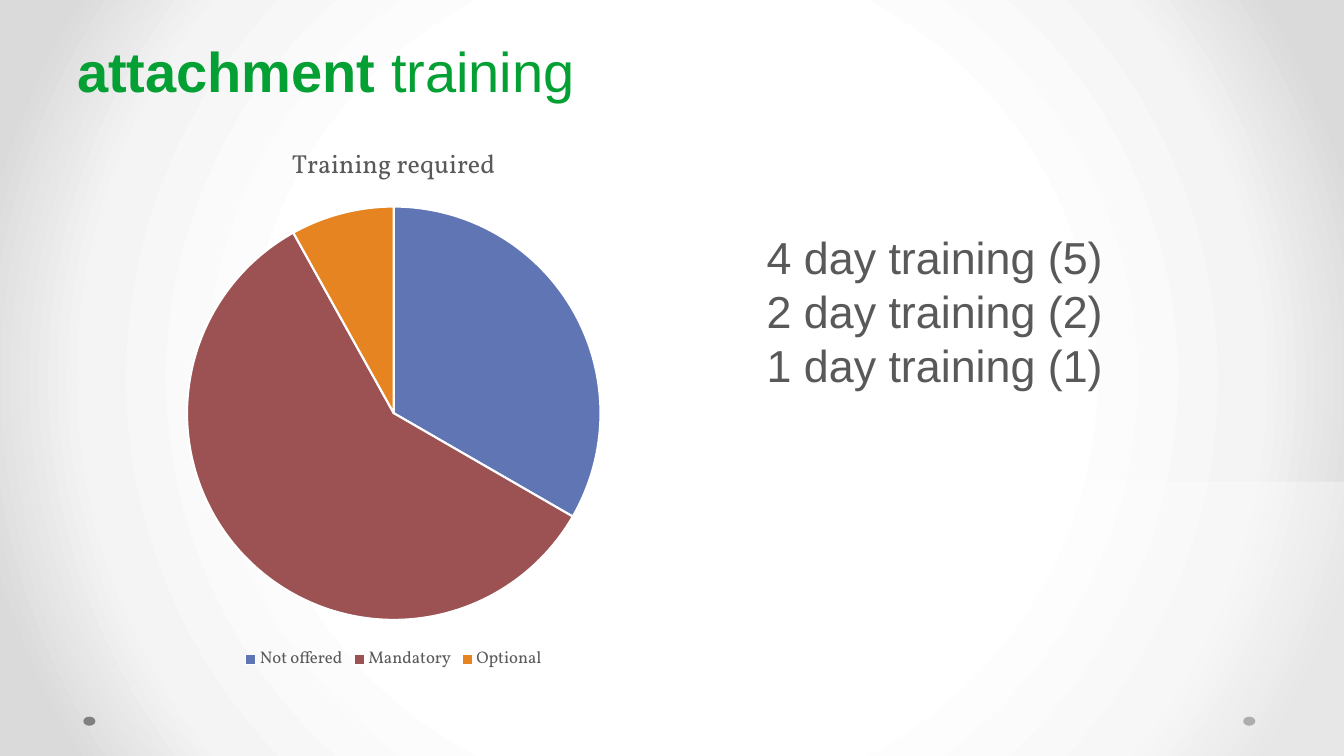
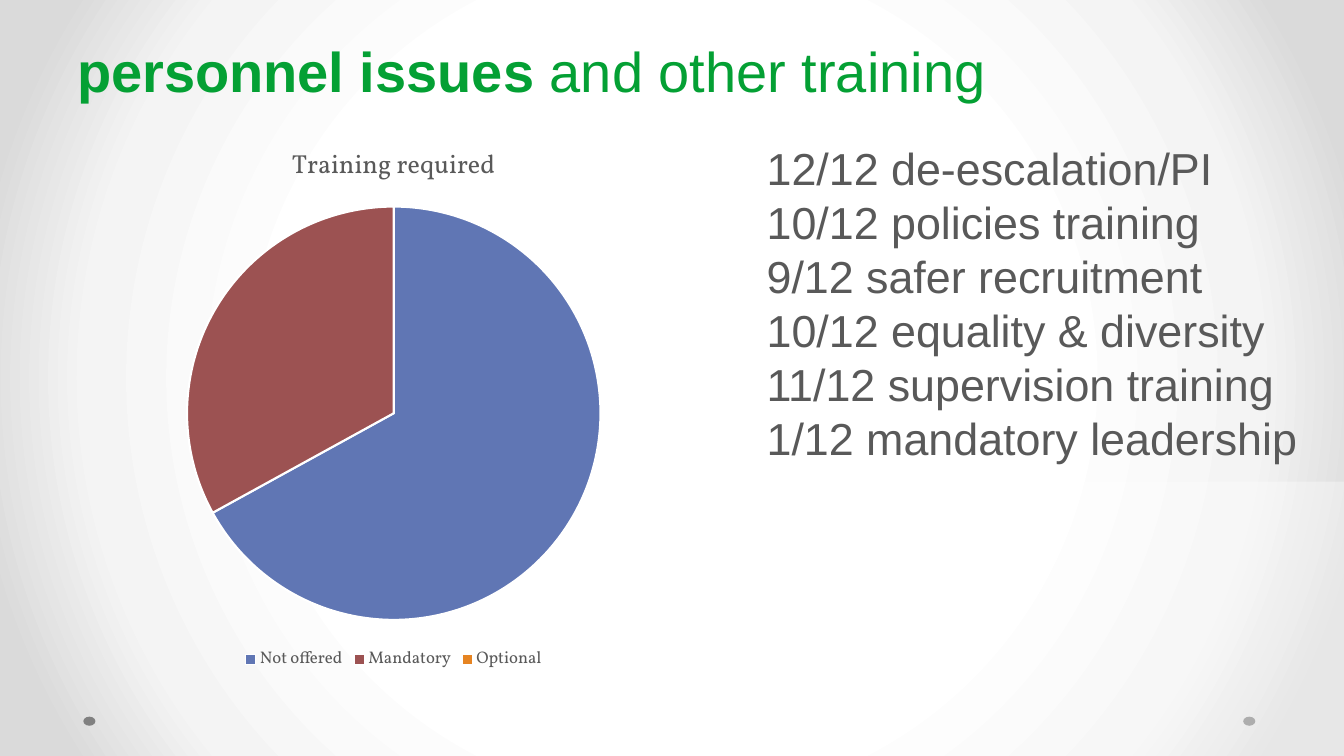
from lxml.etree import SubElement
from pptx import Presentation
from pptx.chart.data import CategoryChartData
from pptx.dml.color import RGBColor
from pptx.enum.chart import XL_CHART_TYPE, XL_LEGEND_POSITION
from pptx.enum.shapes import MSO_SHAPE
from pptx.enum.text import MSO_ANCHOR
from pptx.oxml.ns import qn
from pptx.util import Inches, Pt

WIDTH, HEIGHT = Inches(13.33), Inches(7.5)

GREEN = RGBColor(0x04, 0xA0, 0x34)
TEXT_GREY = RGBColor(0x59, 0x59, 0x59)
DOT_GREY = RGBColor(0x80, 0x80, 0x80)
WHITE = RGBColor(0xFF, 0xFF, 0xFF)
LIGHT_GREY = RGBColor(0xF4, 0xF4, 0xF4)
EDGE_GREY = RGBColor(0xDA, 0xDA, 0xDA)
SLICE_COLOURS = (
    RGBColor(0x60, 0x76, 0xB4),
    RGBColor(0x9C, 0x52, 0x52),
    RGBColor(0xE6, 0x84, 0x22),
)
BACKGROUND_STOPS = ((50, WHITE), (76, LIGHT_GREY), (92, EDGE_GREY))

SANS, SERIF = "Arial", "Vollkorn"
CHART_TITLE = "Training required"
CATEGORIES = ("Not offered", "Mandatory", "Optional")

# Regions: left, top, width, height in percent of the slide
TITLE_REGION = (5, 3.2, 90, 11.2)
CHART_REGION = (5, 16.4, 48.6, 72.9)
BAND_REGION = (53.3, 63.7, 46.7, 36.3)
DOT_REGIONS = ((92.5, 94.8, 0.9, 1.2), (6.2, 94.8, 0.9, 1.2))
# Pie: shares of the chart area
PIE_LAYOUT = {"x": 0.18, "y": 0.15, "w": 0.64, "h": 0.75}

SLIDES = (
    {
        "title": ("attachment", " training"),
        "values": (33, 58, 8),
        "region": (56.3, 29.7, 37.7, 54.1),
        "lines": ("4 day training (5)", "2 day training (2)",
                  "1 day training (1)"),
    },
    {
        "title": ("personnel issues", " and other training"),
        "values": (67, 33, 0),
        "region": (56.3, 18, 41.9, 54.1),
        "lines": ("12/12 de-escalation/PI", "10/12 policies training",
                  "9/12 safer recruitment", "10/12 equality & diversity",
                  "11/12 supervision training", "1/12 mandatory leadership"),
    },
)


def place(region):
    """Turn percentages into left, top, width and height."""
    return [int(share * side / 100)
            for share, side in zip(region, (WIDTH, HEIGHT, WIDTH, HEIGHT))]


def style_font(font, name, size, colour, bold=False):
    font.name, font.size, font.bold = name, Pt(size), bold
    font.color.rgb = colour


def add_span(para, text, size, colour, bold=False):
    span = para.add_run()
    span.text = text
    style_font(span.font, SANS, size, colour, bold)


def add_plain_shape(page, kind, region, colour):
    shape = page.shapes.add_shape(kind, *place(region))
    shape.shadow.inherit = False
    shape.fill.solid()
    shape.fill.fore_color.rgb = colour
    shape.line.fill.background()
    return shape


def add_text_frame(page, region):
    frame = page.shapes.add_textbox(*place(region)).text_frame
    frame.word_wrap = True
    return frame


def paint_background(page):
    # Circular gradient, light in the centre
    page.background.fill.gradient()
    gradient = page.element.find(".//" + qn("a:gradFill"))
    for child in list(gradient):
        gradient.remove(child)
    stops = SubElement(gradient, qn("a:gsLst"))
    for position, colour in BACKGROUND_STOPS:
        stop = SubElement(stops, qn("a:gs"), pos=str(position * 1000))
        SubElement(stop, qn("a:srgbClr"), val=str(colour))
    circle = SubElement(gradient, qn("a:path"), {"path": "circle"})
    SubElement(circle, qn("a:fillToRect"),
               {side: "50000" for side in ("l", "t", "r", "b")})

    # Footer dots under a translucent band
    for region in DOT_REGIONS:
        add_plain_shape(page, MSO_SHAPE.OVAL, region, DOT_GREY)
    band = add_plain_shape(page, MSO_SHAPE.RECTANGLE, BAND_REGION, WHITE)
    colour = band.element.spPr.find(qn("a:solidFill")).find(qn("a:srgbClr"))
    SubElement(colour, qn("a:alpha"), val="36000")


def add_title(page, region, strong, light):
    frame = add_text_frame(page, region)
    frame.vertical_anchor = MSO_ANCHOR.BOTTOM
    para = frame.paragraphs[0]
    para.line_spacing = Pt(58)
    add_span(para, strong, 40, GREEN, bold=True)
    add_span(para, light, 40, GREEN)


def add_pie(page, region, values):
    data = CategoryChartData()
    data.categories = CATEGORIES
    data.add_series(CHART_TITLE, values)
    chart = page.shapes.add_chart(
        XL_CHART_TYPE.PIE, *place(region), data).chart
    chart.font.name, chart.font.size = SERIF, Pt(10)

    # Title and legend
    chart.has_title = True
    para = chart.chart_title.text_frame.paragraphs[0]
    span = para.add_run()
    span.text = CHART_TITLE
    style_font(span.font, SERIF, 18.6, TEXT_GREY)
    chart.chart_title.include_in_layout = False
    chart.has_legend = True
    chart.legend.position = XL_LEGEND_POSITION.BOTTOM
    chart.legend.include_in_layout = False
    style_font(chart.legend.font, SERIF, 12, TEXT_GREY)

    # Slices
    plot = chart.plots[0]
    plot.vary_by_categories = True
    for index, colour in enumerate(SLICE_COLOURS):
        slice_format = plot.series[0].points[index].format
        slice_format.fill.solid()
        slice_format.fill.fore_color.rgb = colour
        slice_format.line.color.rgb = WHITE
        slice_format.line.width = Pt(1.5)

    # Fixed place of the pie inside the chart
    area = chart.element.find(".//" + qn("c:plotArea"))
    for old_layout in area.findall(qn("c:layout")):
        area.remove(old_layout)
    layout = SubElement(area, qn("c:layout"))
    area.insert(0, layout)
    manual = SubElement(layout, qn("c:manualLayout"))
    SubElement(manual, qn("c:layoutTarget"), val="inner")
    for axis in "xy":
        SubElement(manual, qn(f"c:{axis}Mode"), val="edge")
    for key, share in PIE_LAYOUT.items():
        SubElement(manual, qn(f"c:{key}"), val=str(share))


def add_lines(page, region, lines):
    frame = add_text_frame(page, region)
    for index, line in enumerate(lines):
        para = frame.add_paragraph() if index else frame.paragraphs[0]
        para.line_spacing = Pt(38.5)
        add_span(para, line, 32, TEXT_GREY)


def add_training_slide(deck, content):
    page = deck.slides.add_slide(deck.slide_layouts[6])
    paint_background(page)
    add_title(page, TITLE_REGION, *content["title"])
    add_pie(page, CHART_REGION, content["values"])
    add_lines(page, content["region"], content["lines"])


def main():
    deck = Presentation()
    deck.slide_width, deck.slide_height = WIDTH, HEIGHT
    for content in SLIDES:
        add_training_slide(deck, content)
    deck.save("out.pptx")


if __name__ == "__main__":
    main()
